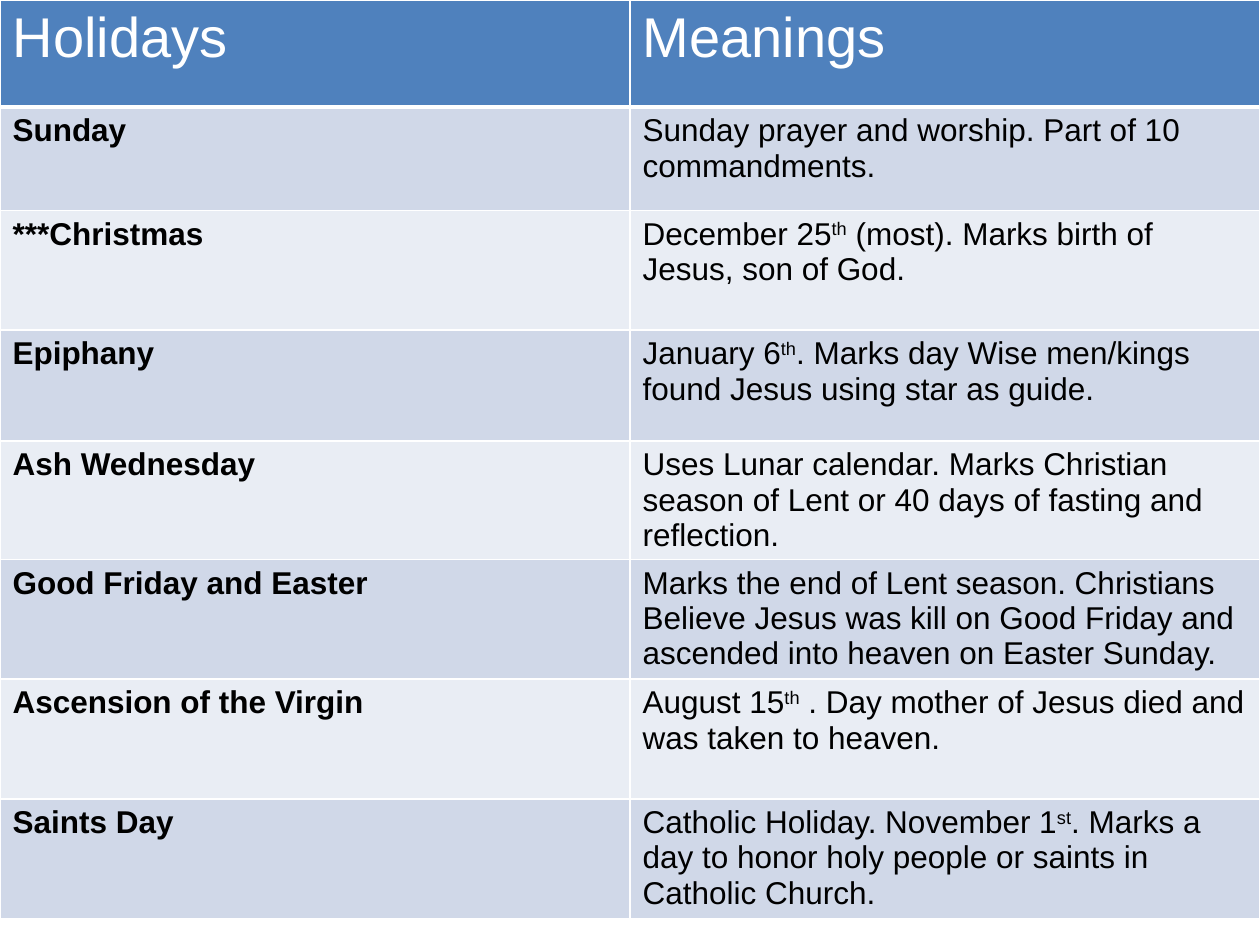
from dataclasses import dataclass

from lxml import etree
from pptx import Presentation
from pptx.dml.color import RGBColor
from pptx.oxml.ns import qn
from pptx.util import Inches, Pt

HEADINGS = ("Holidays", "Meanings")
# Text between carets is superscript.
HOLIDAYS = [
    ("Sunday", "Sunday prayer and worship. Part of 10 commandments."),
    ("***Christmas", "December 25^th^ (most). Marks birth of Jesus, son of God."),
    ("Epiphany", "January 6^th^. Marks day Wise men/kings found Jesus using star as guide."),
    ("Ash Wednesday", "Uses Lunar calendar. Marks Christian season of Lent or 40 days "
                      "of fasting and reflection."),
    ("Good Friday and Easter", "Marks the end of Lent season. Christians Believe Jesus was "
                               "kill on Good Friday and ascended into heaven on Easter Sunday."),
    ("Ascension of the Virgin", "August 15^th^ . Day mother of Jesus died and was taken to heaven."),
    ("Saints Day", "Catholic Holiday. November 1^st^. Marks a day to honor holy people "
                   "or saints in Catholic Church."),
]
ROW_HEIGHTS = (0.85, 0.82, 0.95, 0.88, 0.85, 0.95, 0.95, 0.95)
SLIDE_WIDTH, SLIDE_HEIGHT = 10, 7.5
BLANK_LAYOUT = 6


@dataclass(frozen=True)
class Theme:
    font: str = "Arial"
    heading_size: int = 32
    body_size: int = 18
    heading_text: str = "FFFFFF"
    body_text: str = "000000"
    heading_fill: str = "4F81BD"
    bands: tuple = ("D0D8E8", "E9EDF4")
    border: str = "FFFFFF"
    border_width: float = 1
    heading_rule: float = 3


THEME = Theme()


def add_borders(cell, bottom_width):
    properties = cell._tc.get_or_add_tcPr()
    for side in "LRTB":
        width = bottom_width if side == "B" else THEME.border_width
        line = etree.SubElement(properties, qn(f"a:ln{side}"), w=str(Pt(width)))
        fill = etree.SubElement(line, qn("a:solidFill"))
        etree.SubElement(fill, qn("a:srgbClr"), val=THEME.border)


def write_cell(cell, text, size, color, bold):
    paragraph = cell.text_frame.paragraphs[0]
    for index, part in enumerate(text.split("^")):
        run = paragraph.add_run()
        run.text = part
        run.font.name = THEME.font
        run.font.size = Pt(size)
        run.font.bold = bold
        run.font.color.rgb = RGBColor.from_string(color)
        if index % 2:
            run.font._element.set("baseline", "30000")


def add_holiday_table(slide):
    rows = [HEADINGS, *HOLIDAYS]
    table = slide.shapes.add_table(
        len(rows), len(HEADINGS), 0, 0,
        Inches(SLIDE_WIDTH), Inches(sum(ROW_HEIGHTS))).table
    for row_index, (texts, height) in enumerate(zip(rows, ROW_HEIGHTS)):
        table.rows[row_index].height = Inches(height)
        heading = row_index == 0
        if heading:
            fill, color, size = THEME.heading_fill, THEME.heading_text, THEME.heading_size
        else:
            fill = THEME.bands[(row_index - 1) % len(THEME.bands)]
            color, size = THEME.body_text, THEME.body_size
        for column_index, text in enumerate(texts):
            cell = table.cell(row_index, column_index)
            add_borders(cell, THEME.heading_rule if heading else THEME.border_width)
            cell.fill.solid()
            cell.fill.fore_color.rgb = RGBColor.from_string(fill)
            write_cell(cell, text, size, color, bold=not heading and column_index == 0)


def main():
    presentation = Presentation()
    presentation.slide_width = Inches(SLIDE_WIDTH)
    presentation.slide_height = Inches(SLIDE_HEIGHT)
    slide = presentation.slides.add_slide(presentation.slide_layouts[BLANK_LAYOUT])
    add_holiday_table(slide)
    presentation.save("out.pptx")


if __name__ == "__main__":
    main()
